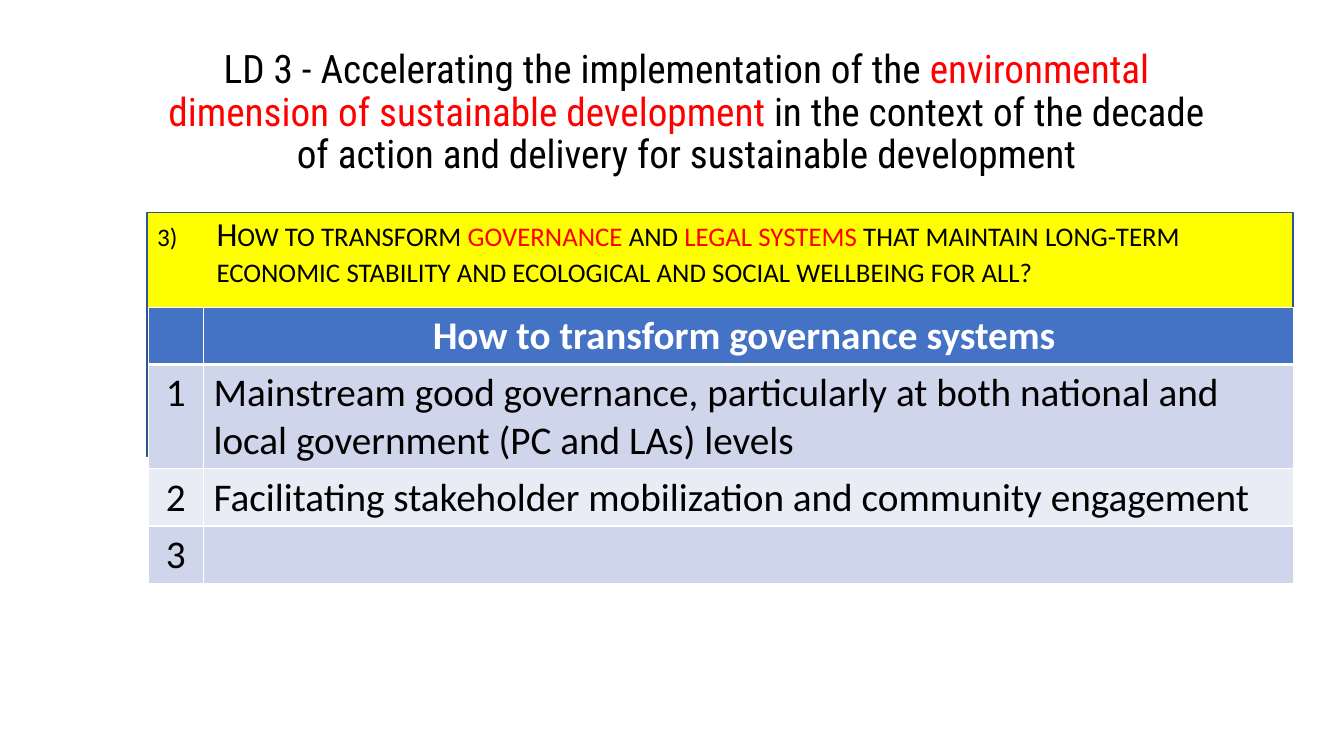
from dataclasses import dataclass
from lxml.etree import SubElement
from pptx import Presentation
from pptx.dml.color import RGBColor
from pptx.enum.shapes import MSO_SHAPE
from pptx.enum.text import MSO_ANCHOR, PP_ALIGN
from pptx.oxml.ns import qn
from pptx.util import Pt


@dataclass(frozen=True)
class Theme:
    black: str = "000000"
    white: str = "FFFFFF"
    red: str = "FF0000"
    yellow: str = "FFFF00"
    outline: str = "325491"
    header: str = "4472C4"
    bands: tuple = ("CFD5EA", "E9EBF5")
    title_font: str = "Roboto Condensed"
    body_font: str = "Calibri"
    large: float = 28
    medium: float = 24


@dataclass(frozen=True)
class Box:
    left: float
    top: float
    width: float
    height: float

    def lengths(self):
        return [Pt(value) for value in (self.left, self.top, self.width, self.height)]


THEME = Theme()
PAGE = Box(0, 0, 960, 540)
TITLE_BOX = Box(105.1, 28.8, 770.4, 104.4)
PANEL_BOX = Box(105.1, 151.9, 818.6, 174.2)
QUESTION_BOX = Box(105.1, 151.9, 789.1, 383.8)
TABLE_BOX = Box(105.8, 219.6, 817.9, 196.6)
NUMBER_WIDTH = 39.6
ROW_HEIGHT = 29.2

TITLE = [
    ("LD 3 - Accelerating the implementation of the ", THEME.black),
    ("environmental dimension of sustainable development ", THEME.red),
    ("in the context of the decade of action and delivery for sustainable development", THEME.black),
]
QUESTION = [
    ("How to transform ", THEME.black),
    ("governance", THEME.red),
    (" and ", THEME.black),
    ("legal systems ", THEME.red),
    ("that maintain long-term economic stability and ecological and social wellbeing for all?", THEME.black),
]
ROWS = [
    ("", "How to transform governance systems "),
    ("1", "Mainstream good governance, particularly at both national and local government (PC and LAs) levels"),
    ("2", "Facilitating stakeholder mobilization and community engagement"),
    ("3", ""),
]


def set_format(target, values):
    for name, value in values.items():
        setattr(target, name, value)


def add_spans(para, spans, values):
    for text, color in spans:
        span = para.add_run()
        span.text = text
        set_format(span.font, values)
        span.font.color.rgb = RGBColor.from_string(color)


def add_text(page, box, anchor, para_values, spans, font_values):
    frame = page.shapes.add_textbox(*box.lengths()).text_frame
    set_format(frame, {"word_wrap": True, "vertical_anchor": anchor})
    para = frame.paragraphs[0]
    set_format(para, para_values)
    add_spans(para, spans, font_values)
    return para


def add_panel(page, box):
    panel = page.shapes.add_shape(MSO_SHAPE.RECTANGLE, *box.lengths())
    panel.shadow.inherit = False
    panel.fill.solid()
    panel.fill.fore_color.rgb = RGBColor.from_string(THEME.yellow)
    panel.line.color.rgb = RGBColor.from_string(THEME.outline)
    panel.line.width = Pt(1)


def add_question(page, box):
    para = add_text(
        page, box, MSO_ANCHOR.TOP,
        {"line_spacing": 0.9, "space_before": Pt(10)},
        QUESTION, {"name": THEME.body_font, "size": Pt(THEME.medium)},
    )
    for span in para.runs:
        span._r.get_or_add_rPr().set("cap", "small")
    properties = para._p.get_or_add_pPr()
    indent = Pt(42.5)
    properties.set("marL", str(indent))
    properties.set("indent", str(-indent))
    SubElement(properties, qn("a:buSzPct"), val="75000")
    SubElement(properties, qn("a:buFont"), typeface=THEME.body_font)
    SubElement(properties, qn("a:buAutoNum"), type="arabicParenR", startAt="3")


def add_title(page, box):
    add_text(
        page, box, MSO_ANCHOR.MIDDLE,
        {"alignment": PP_ALIGN.CENTER, "line_spacing": 0.9},
        TITLE, {"name": THEME.title_font, "size": Pt(THEME.large)},
    )


def style_cell(cell, color, top, bottom):
    properties = cell._tc.get_or_add_tcPr()
    for side, width in {"lnL": 1, "lnR": 1, "lnT": top, "lnB": bottom}.items():
        line = SubElement(properties, qn(f"a:{side}"), w=str(Pt(width)))
        SubElement(SubElement(line, qn("a:solidFill")), qn("a:srgbClr"), val=THEME.white)
    cell.fill.solid()
    cell.fill.fore_color.rgb = RGBColor.from_string(color)


def add_answers(page, box):
    holder = page.shapes.add_table(len(ROWS), 2, *box.lengths())
    table = holder.table
    for column, width in zip(table.columns, (NUMBER_WIDTH, box.width - NUMBER_WIDTH)):
        column.width = Pt(width)
    for row_index, texts in enumerate(ROWS):
        table.rows[row_index].height = Pt(ROW_HEIGHT)
        is_header = row_index == 0
        fill = THEME.header if is_header else THEME.bands[(row_index - 1) % 2]
        ink = THEME.white if is_header else THEME.black
        for column_index, text in enumerate(texts):
            cell = table.cell(row_index, column_index)
            style_cell(cell, fill, 3 if row_index == 1 else 1, 3 if is_header else 1)
            para = cell.text_frame.paragraphs[0]
            if is_header or column_index == 0:
                para.alignment = PP_ALIGN.CENTER
            if text:
                add_spans(para, [(text, ink)], {
                    "name": THEME.body_font, "size": Pt(THEME.large), "bold": is_header,
                })
    holder.height = Pt(box.height)


def main():
    deck = Presentation()
    set_format(deck, {"slide_width": Pt(PAGE.width), "slide_height": Pt(PAGE.height)})
    page = deck.slides.add_slide(deck.slide_layouts[6])
    add_panel(page, PANEL_BOX)
    add_question(page, QUESTION_BOX)
    add_title(page, TITLE_BOX)
    add_answers(page, TABLE_BOX)
    deck.save("out.pptx")


if __name__ == "__main__":
    main()
